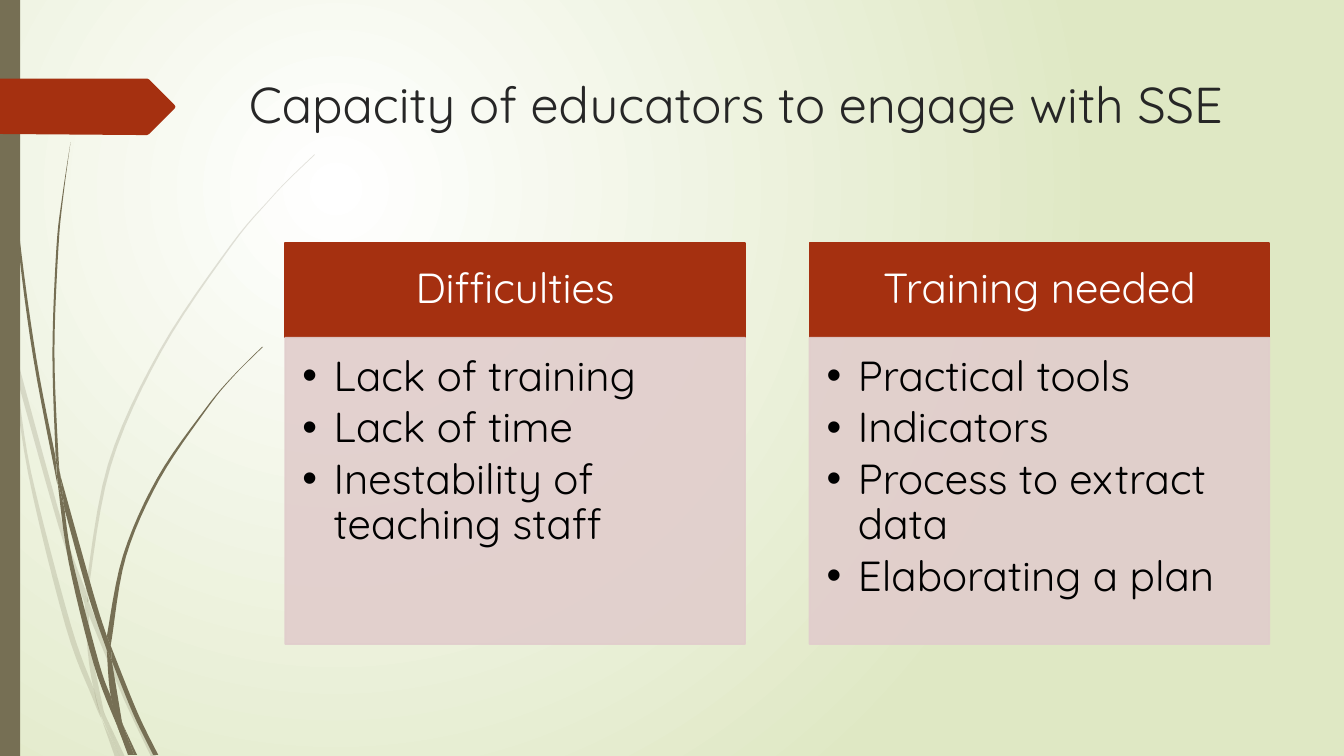
import pptx
import pptx.util
import pptx.dml.color
import pptx.enum.shapes
import pptx.enum.text
import pptx.oxml.ns
from lxml import etree

Inches, Pt = pptx.util.Inches, pptx.util.Pt
qn = pptx.oxml.ns.qn
Shape = pptx.enum.shapes.MSO_SHAPE
Align = pptx.enum.text.PP_ALIGN
Anchor = pptx.enum.text.MSO_ANCHOR

FONT = "Quicksand"
RUST, OLIVE, ROSE = "A53010", "766F54", "E1CDCC"
WHITE, BLACK, CHARCOAL, PALE_GREEN = "FFFFFF", "000000", "262626", "DFE8C4"

TITLE = "Capacity of educators to engage with SSE"
COLUMNS = [
    ("Difficulties", ["Lack of training", "Lack of time", "Inestability of teaching staff"]),
    ("Training needed", ["Practical tools", "Indicators", "Process to extract data", "Elaborating a plan"]),
]
COLUMN_LEFT, COLUMN_STEP, COLUMN_WIDTH = 2.83, 5.2, 4.56
HEADING_TOP, HEADING_HEIGHT, BODY_HEIGHT = 2.41, 0.94, 3.04

FAINT_BLADES = [
    ([(0.11, 3.5), (0.09, 3.22), (0, 2.82)], [(0, 2.99), (0.1, 3.44)]),
    ([(0.14, 3.45), (0.62, 5.2), (0.85, 5.86)], [(0.84, 5.99), (0.58, 5.22), (0.17, 3.76)]),
    ([(0.88, 5.96), (0.92, 6.07), (1.27, 6.92), (1.55, 7.51)], [(1.5, 7.51), (1.23, 6.94), (0.88, 6.1)]),
    ([(1.05, 7.11), (1.19, 7.51)], [(1.24, 7.51), (1.05, 7.11)]),
    ([(0.11, 3.5), (0.28, 4.7), (0.65, 6.21), (0.92, 6.93), (1.01, 7.14)],
     [(0.93, 6.83), (0.7, 6.19), (0.31, 4.69), (0.17, 3.76)]),
    ([(0.84, 5.99), (0.87, 6.46), (0.93, 6.83), (1.05, 7.11)], [(1.03, 7.06), (0.91, 6.46), (0.88, 6.1)]),
    ([(0.88, 5.96), (0.88, 5.84), (1.1, 4.62), (1.6, 3.49), (2.29, 2.45), (2.68, 1.98), (2.9, 1.75), (3.12, 1.54)],
     [(3.12, 1.53), (2.89, 1.75), (2.68, 1.97), (2.28, 2.44), (1.58, 3.48), (1.07, 4.61), (0.85, 5.84)]),
    ([(1.01, 7.14), (1.14, 7.51)], [(1.19, 7.51), (1.01, 7.14)]),
    ([(0.88, 6.1), (0.88, 5.96)], [(0.85, 5.86), (0.84, 5.99)]),
    ([(0.93, 6.83), (0.99, 7.07), (1.19, 7.51)], [(1.05, 7.11), (0.96, 6.92)]),
]
DARK_BLADES = [
    ([(0.03, 0), (0.07, 1.1), (0.17, 2.33), (0.33, 3.55), (0.57, 4.81)],
     [(0.55, 4.53), (0.36, 3.55), (0.19, 2.32), (0.08, 1.09), (0.04, 0)]),
    ([(0.6, 4.72), (0.93, 5.9), (1.06, 6.31)], [(1.06, 6.45), (0.88, 5.92), (0.64, 5.05)]),
    ([(1.1, 6.41), (1.36, 7.06), (1.57, 7.49)], [(1.52, 7.49), (1.32, 7.08), (1.11, 6.56)]),
    ([(0.57, 4.77), (0.68, 5.57), (0.93, 6.59), (1.17, 7.22)],
     [(1.1, 6.91), (0.98, 6.57), (0.72, 5.56), (0.64, 5.05)]),
    ([(0.6, 4.72), (0.58, 4.53), (0.54, 3.49), (0.58, 2.45), (0.63, 1.93), (0.7, 1.41)],
     [(0.7, 1.41), (0.62, 1.93), (0.56, 2.45), (0.52, 3.49), (0.55, 4.49)]),
    ([(1.22, 7.19), (1.33, 7.49)], [(1.36, 7.49), (1.22, 7.19)]),
    ([(0.55, 4.49), (0.57, 4.77)], [(0.64, 5.05), (0.6, 4.72)]),
    ([(1.1, 6.41), (1.11, 6.33), (1.25, 5.52), (1.58, 4.76), (2.05, 4.06), (2.31, 3.74), (2.61, 3.44)],
     [(2.6, 3.44), (2.31, 3.73), (2.04, 4.05), (1.56, 4.74), (1.22, 5.51), (1.06, 6.31)]),
    ([(1.17, 7.22), (1.27, 7.49)], [(1.31, 7.49), (1.17, 7.22)]),
    ([(1.06, 6.45), (1.1, 6.91), (1.22, 7.19)], [(1.21, 7.16), (1.11, 6.56)]),
    ([(1.06, 6.45), (1.11, 6.56)], [(1.1, 6.41), (1.06, 6.31)]),
    ([(1.1, 6.91), (1.17, 7.22), (1.3, 7.49)], [(1.33, 7.49), (1.22, 7.19)]),
]
RIBBON = [(0, 0.78), (1.46, 0.78), (1.48, 0.79), (1.73, 1.04), (1.74, 1.06),
          (1.73, 1.08), (1.48, 1.33), (1.46, 1.34), (1.36, 1.34), (0, 1.33)]


def rgb(hex_code):
    return pptx.dml.color.RGBColor.from_string(hex_code)


def paint(shape, color, opacity=100, line_width=0):
    shape.shadow.inherit = False
    shape.fill.solid()
    shape.fill.fore_color.rgb = rgb(color)
    if line_width:
        shape.line.width = Pt(line_width)
        shape.line.color.rgb = rgb(color)
    else:
        shape.line.fill.background()
    if opacity < 100:
        for tint in shape.element.iter(qn("a:srgbClr")):
            etree.SubElement(tint, qn("a:alpha"), val=str(opacity * 1000))


def add_rect(slide, left, top, width, height):
    return slide.shapes.add_shape(Shape.RECTANGLE, Inches(left), Inches(top), Inches(width), Inches(height))


def smooth(edge, steps=6):
    padded = [edge[0], *edge, edge[-1]]
    curve = [edge[0]]
    for a, b, c, d in zip(padded, padded[1:], padded[2:], padded[3:]):
        for step in range(1, steps + 1):
            t = step / steps
            curve.append(tuple(
                q + t * (r - p) / 2 + t**2 * (2*p - 5*q + 4*r - s) / 2 + t**3 * (3*q - p - 3*r + s) / 2
                for p, q, r, s in zip(a, b, c, d)))
    return curve


def add_outline(slide, points, color, opacity=100):
    corners = [(Inches(x), Inches(y)) for x, y in points]
    builder = slide.shapes.build_freeform(*corners[0])
    builder.add_line_segments(corners[1:], close=True)
    paint(builder.convert_to_shape(), color, opacity)


def write(shape, lines, size, color, align, anchor, insets):
    frame = shape.text_frame
    frame.word_wrap = True
    frame.vertical_anchor = anchor
    frame.margin_left, frame.margin_top, frame.margin_right, frame.margin_bottom = map(Inches, insets)
    frame.text = "\n".join(lines)
    for paragraph in frame.paragraphs:
        paragraph.alignment = align
        for run in paragraph.runs:
            run.font.size = Pt(size)
            run.font.name = FONT
            run.font.color.rgb = rgb(color)
    return frame.paragraphs


def set_background(slide):
    fill = slide.background.fill
    fill.gradient()
    for stop, color, position in zip(fill.gradient_stops, (WHITE, PALE_GREEN), (0, 1)):
        stop.color.rgb = rgb(color)
        stop.position = position
    gradient = next(slide.element.iter(qn("a:gradFill")))
    gradient.remove(gradient.find(qn("a:lin")))
    glow = etree.SubElement(gradient, qn("a:path"), {"path": "circle"})
    etree.SubElement(glow, qn("a:fillToRect"), l="50000", t="50000", r="100000", b="100000")


def add_column(slide, left, heading, points):
    header = add_rect(slide, left, HEADING_TOP, COLUMN_WIDTH, HEADING_HEIGHT)
    paint(header, RUST, line_width=1.25)
    write(header, [heading], 30, WHITE, Align.CENTER, Anchor.MIDDLE, (0.23, 0.13, 0.23, 0.13))[0].line_spacing = 0.9
    body = add_rect(slide, left, HEADING_TOP + HEADING_HEIGHT, COLUMN_WIDTH, BODY_HEIGHT)
    paint(body, ROSE, 90, 1.25)
    for paragraph in write(body, points, 30, BLACK, Align.LEFT, Anchor.TOP, (0.17, 0.17, 0.23, 0.26)):
        paragraph.line_spacing = 0.9
        paragraph.space_after = Pt(4.5)
        properties = paragraph._p.get_or_add_pPr()
        properties.set("marL", str(Inches(0.31)))
        properties.set("indent", str(-Inches(0.31)))
        etree.SubElement(properties, qn("a:buFont"), typeface="Arial")
        etree.SubElement(properties, qn("a:buChar"), char="•")


def main():
    deck = pptx.Presentation()
    deck.slide_width, deck.slide_height = Inches(13.33), Inches(7.5)
    slide = deck.slides.add_slide(deck.slide_layouts[6])
    set_background(slide)
    for blades, opacity in ((FAINT_BLADES, 20), (DARK_BLADES, 100)):
        for down, back in blades:
            add_outline(slide, smooth(down) + smooth(back), OLIVE, opacity)
    paint(add_rect(slide, 0, 0, 0.2, 7.5), OLIVE)
    add_outline(slide, RIBBON, RUST)
    title = slide.shapes.add_textbox(Inches(2.02), Inches(0.68), Inches(10.56), Inches(0.87))
    write(title, [TITLE], 36, CHARCOAL, Align.CENTER, Anchor.TOP, (0.1, 0.05, 0.1, 0.05))
    for index, (heading, points) in enumerate(COLUMNS):
        add_column(slide, COLUMN_LEFT + index * COLUMN_STEP, heading, points)
    deck.save("out.pptx")


if __name__ == "__main__":
    main()
